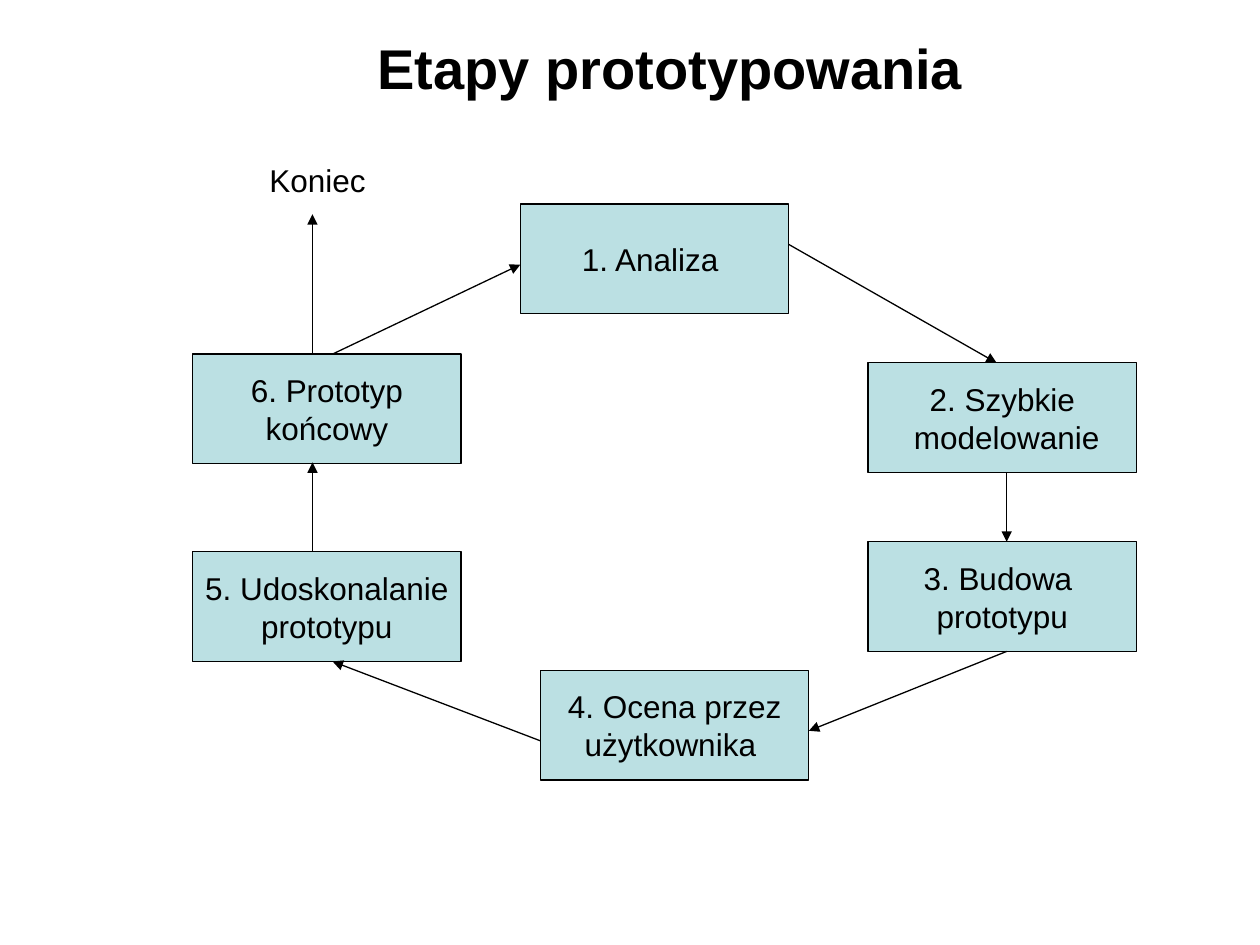
from lxml.etree import SubElement
from pptx import Presentation
from pptx.dml.color import RGBColor
from pptx.enum.shapes import MSO_CONNECTOR, MSO_SHAPE
from pptx.enum.text import MSO_ANCHOR, PP_ALIGN
from pptx.oxml.ns import qn
from pptx.util import Inches, Pt

BLACK = RGBColor(0x00, 0x00, 0x00)
PALE_TEAL = RGBColor(0xBB, 0xE0, 0xE3)
STAGE_WIDTH, STAGE_HEIGHT = 2.13, 0.87
LEFT_COLUMN, RIGHT_COLUMN = 1.53, 6.89

STAGES = [
    (4.13, 1.62, "1. Analiza "),
    (RIGHT_COLUMN, 2.88, "2. Szybkie\n modelowanie"),
    (RIGHT_COLUMN, 4.3, "3. Budowa \nprototypu"),
    (4.29, 5.32, "4. Ocena przez\nużytkownika "),
    (LEFT_COLUMN, 4.38, "5. Udoskonalanie\nprototypu"),
    (LEFT_COLUMN, 2.81, "6. Prototyp\nkońcowy"),
]

ARROWS = [
    (6.26, 1.94, 7.91, 2.88),
    (7.99, 3.75, 7.99, 4.3),
    (7.99, 5.17, 6.42, 5.8),
    (4.29, 5.88, 2.64, 5.25),
    (2.48, 4.38, 2.48, 3.67),
    (2.48, 2.81, 2.48, 1.7),
    (2.64, 2.81, 4.13, 2.1),
]


def set_attributes(target, values):
    """Set each named value on the target."""
    for name, value in values.items():
        setattr(target, name, value)


def write_text(shape, text, size=18, bold=False, wrap=True):
    """Write centred black Arial text, one paragraph per line."""
    frame = shape.text_frame
    frame.text = text
    set_attributes(frame, {"word_wrap": wrap, "vertical_anchor": MSO_ANCHOR.MIDDLE})
    for paragraph in frame.paragraphs:
        paragraph.alignment = PP_ALIGN.CENTER
        for run in paragraph.runs:
            set_attributes(run.font, {"name": "Arial", "size": Pt(size), "bold": bold})
            run.font.color.rgb = BLACK


def style_line(line):
    """Give a line the thin black stroke of the diagram."""
    line.color.rgb = BLACK
    line.width = Pt(0.75)


def add_title(slide, text):
    """Place and format the title placeholder."""
    title = slide.shapes.title
    set_attributes(title, {"left": Inches(2.01), "top": Inches(0.21),
                           "width": Inches(6.62), "height": Inches(0.64)})
    write_text(title, text, size=32, bold=True)


def add_stage(slide, left, top, text):
    """Add one stage box of the cycle."""
    shape = slide.shapes.add_shape(
        MSO_SHAPE.RECTANGLE, Inches(left), Inches(top),
        Inches(STAGE_WIDTH), Inches(STAGE_HEIGHT))
    shape.shadow.inherit = False
    shape.fill.solid()
    shape.fill.fore_color.rgb = PALE_TEAL
    style_line(shape.line)
    write_text(shape, text, wrap=False)


def add_arrow(slide, *ends):
    """Add a straight arrow pointing at its second end."""
    arrow = slide.shapes.add_connector(
        MSO_CONNECTOR.STRAIGHT, *(Inches(value) for value in ends))
    style_line(arrow.line)
    SubElement(arrow.line._get_or_add_ln(), qn("a:tailEnd"), type="triangle")
    SubElement(arrow._element.spPr, qn("a:effectLst"))


def add_label(slide, left, top, width, height, text):
    """Add a plain centred text label."""
    label = slide.shapes.add_textbox(
        Inches(left), Inches(top), Inches(width), Inches(height))
    write_text(label, text)


def main():
    """Build the prototyping cycle slide."""
    presentation = Presentation()
    set_attributes(presentation, {"slide_width": Inches(10), "slide_height": Inches(7.5)})
    slide = presentation.slides.add_slide(presentation.slide_layouts[5])
    add_title(slide, "Etapy prototypowania")
    for stage in STAGES:
        add_stage(slide, *stage)
    for arrow in ARROWS:
        add_arrow(slide, *arrow)
    add_label(slide, 1.61, 1.23, 1.89, 0.4, "Koniec ")
    presentation.save("out.pptx")


if __name__ == "__main__":
    main()
